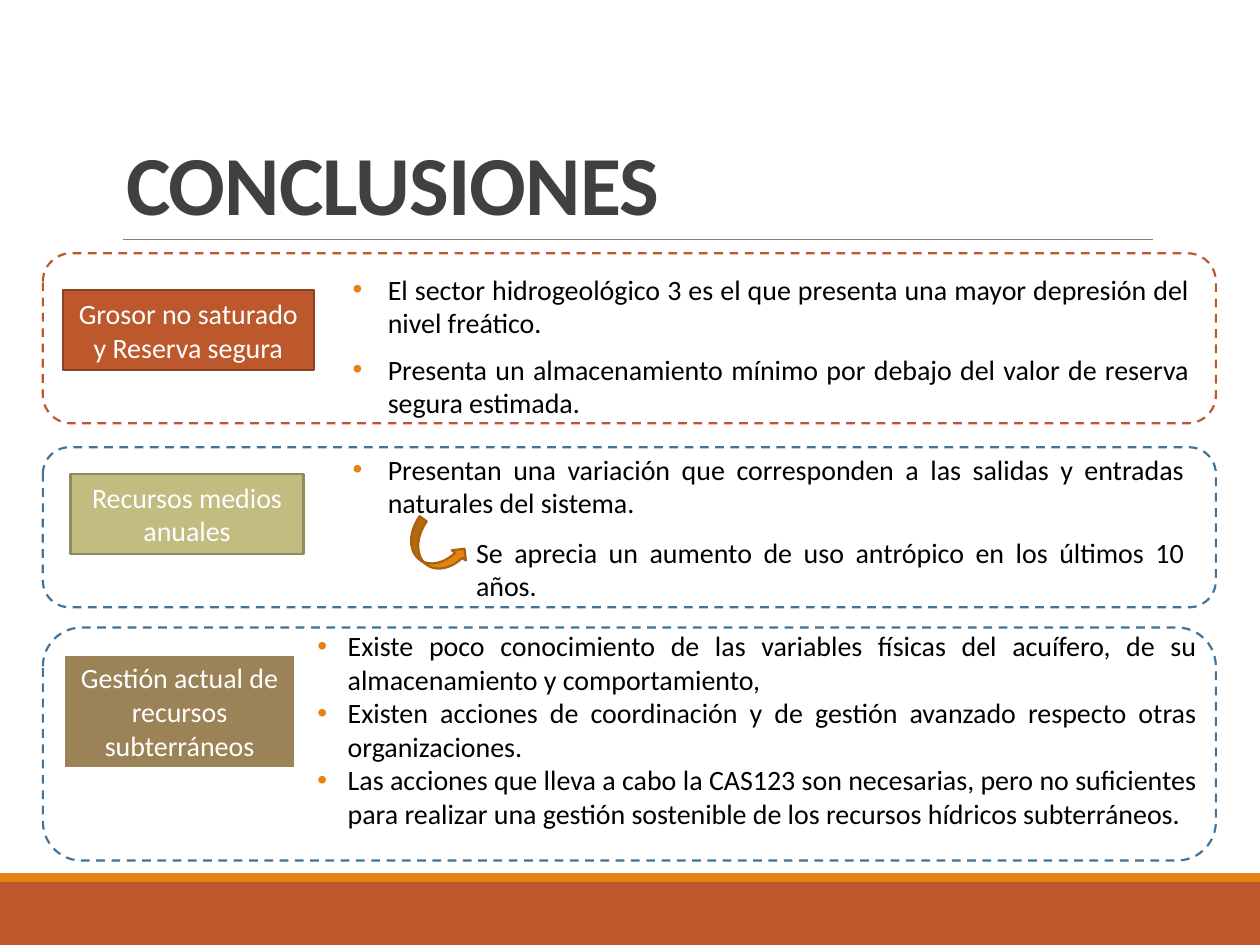
from pptx import Presentation
from pptx.dml.color import RGBColor
from pptx.enum.dml import MSO_LINE_DASH_STYLE as Dash
from pptx.enum.shapes import MSO_CONNECTOR as Conn, MSO_SHAPE as Geo
from pptx.enum.text import MSO_ANCHOR as Anchor, PP_ALIGN as Align
from pptx.oxml.ns import qn
from pptx.util import Inches, Pt
from lxml.etree import SubElement

INK = {"rust": "BD582C", "orange": "E48312", "blue": "40749B", "gray": "808080",
       "dark": "404040", "black": "000000", "white": "FFFFFF", "brown": "8C4121",
       "sand": "C2BC80", "olive": "908B5F", "earth": "9B8357", "amber": "A9610D"}
FONT = "Calibri"
TITLE = "CONCLUSIONES"
BANDS = [((0, 7, 10, 0.5), "rust"), ((0, 6.93, 10, 0.07), "orange")]

# label: place, fill, line, width, text; items: indent, hang, before, after, text
CARDS = [
    {"frame": (2.01, 1.35, "rust"),
     "label": ((0.5, 2.3, 1.99, 0.64), "rust", "brown", 1.25,
               "Grosor no saturado y Reserva segura"),
     "body": (2.7, 2.11, 6.84, 1.29), "inset": 0.1,
     "items": [
         (0.28, 0.28, 7.5, 0, "El sector hidrogeológico 3 es el que presenta una mayor "
          "depresión del nivel freático."),
         (0.28, 0.28, 7.5, 0, "Presenta un almacenamiento mínimo por debajo del valor de "
          "reserva segura estimada.")]},
    {"frame": (3.55, 1.27, "blue"),
     "label": ((0.56, 3.76, 1.85, 0.64), "sand", "olive", 1.25,
               "Recursos medios anuales"),
     "body": (2.7, 3.54, 6.8, 1.3), "inset": 0.1,
     "items": [
         (0.28, 0.28, 0, 9, "Presentan una variación que corresponden a las salidas y "
          "entradas naturales del sistema."),
         (0.98, 0, 0, 0, "Se aprecia un aumento de uso antrópico en los últimos 10 años.")]},
    {"frame": (4.98, 1.85, "blue"),
     "label": ((0.5, 5.19, 1.85, 0.91), "earth", "white", 2,
               "Gestión actual de recursos subterráneos"),
     "body": (2.48, 4.94, 7.02, 1.98), "inset": 0,
     "items": [
         (0.28, 0.24, 0, 0, "Existe poco conocimiento de las variables físicas del "
          "acuífero, de su almacenamiento y comportamiento,"),
         (0.28, 0.24, 0, 0, "Existen acciones de coordinación y de gestión avanzado "
          "respecto otras organizaciones."),
         (0.28, 0.24, 0, 0, "Las acciones que lleva a cabo la CAS123 son necesarias, pero "
          "no suficientes para realizar una gestión sostenible de los recursos hídricos "
          "subterráneos.")]},
]


def rgb(name):
    return RGBColor.from_string(INK[name])


def place(box):
    return [Inches(v) for v in box]


def write(para, text, color, size=16):
    run = para.add_run()
    run.text = text
    run.font.name, run.font.size = FONT, Pt(size)
    run.font.color.rgb = rgb(color)
    return run


def draw(slide, geo, box, fill=None, line=None, width=1.25):
    shape = slide.shapes.add_shape(geo, *place(box))
    shape.shadow.inherit = False
    if fill:
        shape.fill.solid()
        shape.fill.fore_color.rgb = rgb(fill)
    else:
        shape.fill.background()
    if line:
        shape.line.color.rgb = rgb(line)
        shape.line.width = Pt(width)
    else:
        shape.line.fill.background()
    return shape


def add_title(slide):
    title = slide.shapes.title
    title.left, title.top, title.width, title.height = place((0.9, 0.31, 8.25, 1.59))
    frame = title.text_frame
    frame.vertical_anchor, frame.word_wrap = Anchor.BOTTOM, True
    para = frame.paragraphs[0]
    para.alignment, para.line_spacing = Align.LEFT, 0.85
    run = write(para, TITLE, "dark", 48)
    run.font.bold = True
    run.font._element.set("spc", "-50")


def add_rule(slide):
    rule = slide.shapes.add_connector(Conn.STRAIGHT, *place((0.98, 1.9, 9.15, 1.9)))
    rule.line.color.rgb, rule.line.width = rgb("gray"), Pt(0.5)
    SubElement(rule._element.spPr, qn("a:effectLst"))


def add_body(slide, card):
    frame = slide.shapes.add_textbox(*place(card["body"])).text_frame
    frame.word_wrap = True
    frame.margin_left = frame.margin_right = Inches(card["inset"])
    for i, (left, hang, before, after, text) in enumerate(card["items"]):
        para = frame.add_paragraph() if i else frame.paragraphs[0]
        para.alignment = Align.JUSTIFY
        para.space_before, para.space_after = Pt(before), Pt(after)
        props = para._p.get_or_add_pPr()
        props.set("marL", str(Inches(left)))
        props.set("indent", str(-Inches(hang)))
        if hang:
            tint = SubElement(props, qn("a:buClr"))
            SubElement(tint, qn("a:srgbClr")).set("val", INK["orange"])
            SubElement(props, qn("a:buFont")).set("typeface", "Arial")
            SubElement(props, qn("a:buChar")).set("char", "•")
        write(para, text, "black")


def add_label(slide, box, fill, line, width, text):
    frame = draw(slide, Geo.RECTANGLE, box, fill, line, width).text_frame
    frame.word_wrap, frame.vertical_anchor = True, Anchor.MIDDLE
    para = frame.paragraphs[0]
    para.alignment = Align.CENTER
    write(para, text, "white")


def main():
    """Build the conclusions slide."""
    deck = Presentation()
    deck.slide_width, deck.slide_height = Inches(10), Inches(7.5)
    slide = deck.slides.add_slide(deck.slide_layouts[5])
    for box, fill in BANDS:
        draw(slide, Geo.RECTANGLE, box, fill)
    add_rule(slide)
    add_title(slide)
    for card in CARDS:
        add_body(slide, card)
        add_label(slide, *card["label"])
    arrow = draw(slide, Geo.CURVED_UP_ARROW, (3.2, 4.22, 0.51, 0.28), "orange", "amber")
    arrow.rotation = 35.9
    for card in CARDS:
        top, high, line = card["frame"]
        frame = draw(slide, Geo.ROUNDED_RECTANGLE, (0.34, top, 9.31, high), line=line)
        frame.line.dash_style = Dash.DASH
    deck.save("out.pptx")


if __name__ == "__main__":
    main()
